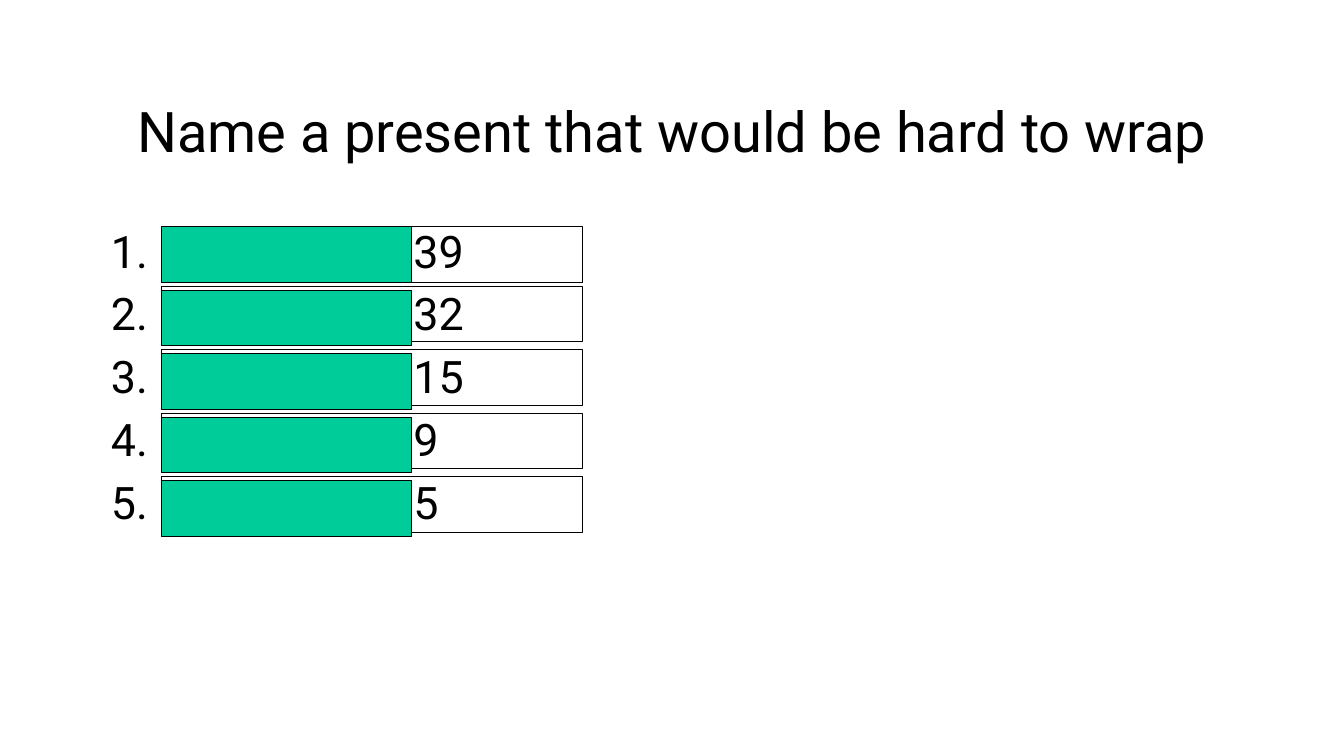
from lxml import etree
from dataclasses import dataclass

from pptx import Presentation
from pptx import util as u
from pptx.dml.color import RGBColor
from pptx.enum import shapes, text
from pptx.oxml import ns

BLACK = RGBColor(0x00, 0x00, 0x00)
GREEN = RGBColor(0x00, 0xCC, 0x99)
WIDTH, HEIGHT = u.Inches(13.33), u.Inches(7.5)
COLUMN, ROW = WIDTH / 80, HEIGHT / 90
FIRST_ROW, ROW_PITCH, FRAME_LIFT = 27, 7.56, 0.48
POINTS = [39, 32, 15, 9, 5]
QUESTION_FONT = {"name": "Roboto", "size": u.Pt(40)}
POINTS_FONT = {"name": "Roboto", "size": u.Pt(32)}
POINTS_INDENT = {
    "marL": u.Inches(0.67),
    "indent": u.Inches(-0.67),
    "defTabSz": u.Inches(3),
}


@dataclass(frozen=True)
class Area:
    left: float
    top: float
    width: float
    height: float

    def place(self, target) -> None:
        lengths = {
            "left": self.left * COLUMN,
            "top": self.top * ROW,
            "width": self.width * COLUMN,
            "height": self.height * ROW,
        }
        for side, length in lengths.items():
            setattr(target, side, u.Emu(round(length)))


def format_line(line, font_values: dict) -> None:
    for name, value in font_values.items():
        setattr(line.font, name, value)
    line.font.color.rgb = BLACK


def write_question(question) -> None:
    Area(6, 8, 68, 15).place(question)
    frame = question.text_frame
    frame.text = "Name a present that would be hard to wrap"
    frame.auto_size = text.MSO_AUTO_SIZE.NONE
    frame.vertical_anchor = text.MSO_ANCHOR.MIDDLE
    frame.paragraphs[0].alignment = text.PP_ALIGN.CENTER
    format_line(frame.paragraphs[0].runs[0], QUESTION_FONT)


def write_points(board) -> None:
    Area(6, 26, 68, 54).place(board)
    frame = board.text_frame
    frame.text = "\n".join(f"\t{points}" for points in POINTS)
    frame.auto_size = text.MSO_AUTO_SIZE.NONE
    for entry in frame.paragraphs:
        properties = entry._p.get_or_add_pPr()
        for name, value in POINTS_INDENT.items():
            properties.set(name, str(int(value)))
        etree.SubElement(properties, ns.qn("a:buFontTx"))
        numbering = etree.SubElement(properties, ns.qn("a:buAutoNum"))
        numbering.set("type", "arabicPeriod")
        format_line(entry.runs[0], POINTS_FONT)


def draw_boxes(slide, areas: list[Area], color: RGBColor | None = None) -> None:
    group = slide.shapes.add_group_shape()
    for area in areas:
        box = group.shapes.add_shape(shapes.MSO_SHAPE.RECTANGLE, 0, 0, 0, 0)
        area.place(box)
        box.shadow.inherit = False
        box.line.color.rgb = BLACK
        box.line.width = u.Pt(0.75)
        if color is None:
            box.fill.background()
        else:
            box.fill.solid()
            box.fill.fore_color.rgb = color


def main() -> None:
    deck = Presentation()
    deck.slide_width, deck.slide_height = WIDTH, HEIGHT
    slide = deck.slides.add_slide(deck.slide_layouts[1])
    write_question(slide.shapes.title)
    write_points(slide.placeholders[1])

    tops = [FIRST_ROW + place * ROW_PITCH for place in range(len(POINTS))]
    frame_tops = [max(FIRST_ROW, top - FRAME_LIFT) for top in tops]
    draw_boxes(slide, [Area(9.6, top, 25.08, 6.6) for top in frame_tops])
    draw_boxes(slide, [Area(9.6, top, 14.88, 6.6) for top in tops], GREEN)
    deck.save("out.pptx")


if __name__ == "__main__":
    main()
